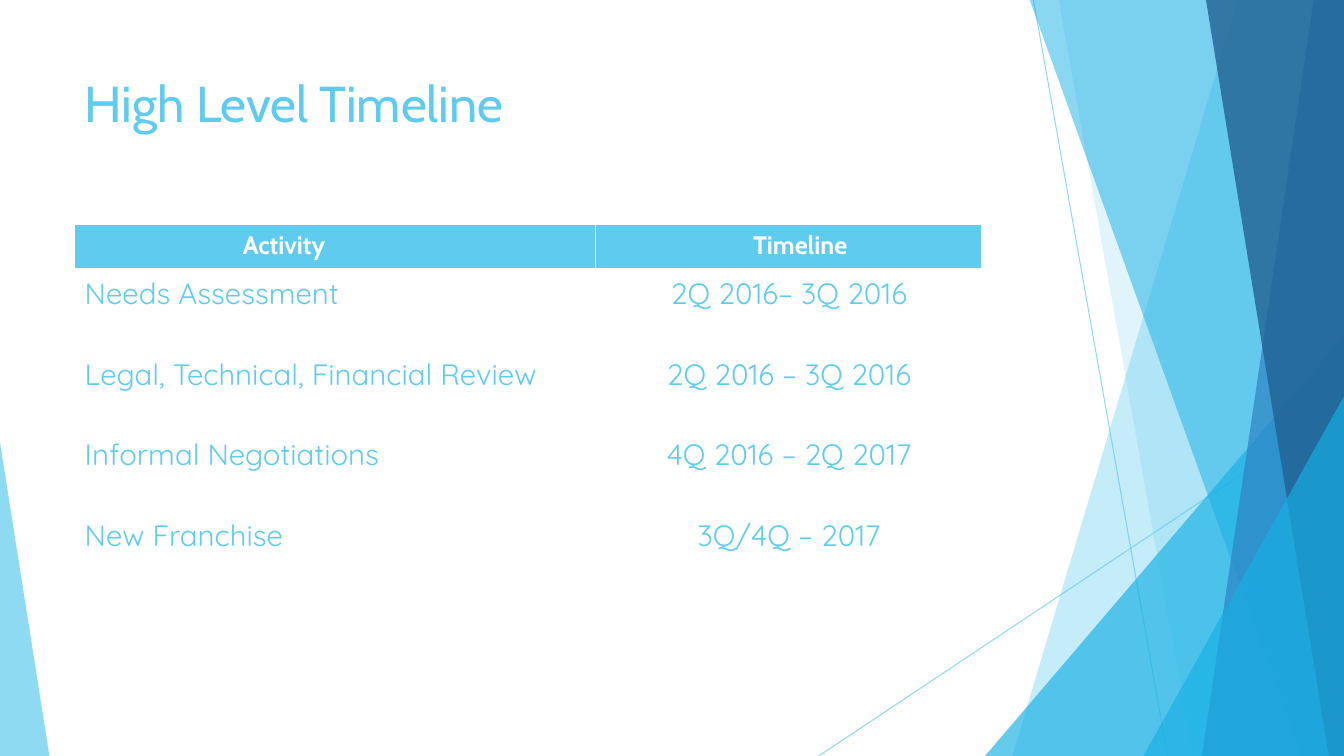
import pptx
import pptx.util
import pptx.dml.color
import pptx.enum.shapes
import pptx.enum.text
import pptx.oxml
import pptx.oxml.ns
import lxml.etree

COLORS = {"sky": "5FCBEF", "cyan": "17B0E4", "blue": "2E83C3",
          "navy": "226292", "white": "FFFFFF"}
HEADING_FONT, BODY_FONT = "Cabin", "Quicksand"
WIDTH, HEIGHT, BLEED_TOP = 13.33, 7.5, -0.01

TITLE = "High Level Timeline"
HEADERS = [("Activity", 1.67), ("Timeline", 1.56)]  # label, left indent
SCHEDULE = [
    ("Needs Assessment", "2Q 2016– 3Q 2016"),
    ("Legal, Technical, Financial Review", "2Q 2016 – 3Q 2016"),
    ("Informal Negotiations", "4Q 2016 – 2Q 2017"),
    ("New Franchise", "3Q/4Q – 2017"),
]
LEFT, TABLE_TOP = 0.74, 2.23
COLUMN_WIDTHS = [5.17, 3.83]
HEADER_HEIGHT, ROW_HEIGHT = 0.45, 0.8

# Hairlines: start, end
HAIRLINES = [((10.25, 0), (11.58, HEIGHT)), ((WIDTH, 4.03), (8.12, HEIGHT))]
# Bands reach the right edge: (top left x, bottom left x, colour, opacity %)
# Wedges stand on the bottom edge: (left, width, height, apex, colour, opacity %)
FACETS = [
    ("band", 12.28, 10.04, "sky", 36),
    ("band", 10.5, 11.83, "sky", 20),
    ("wedge", 9.77, 3.56, 4.17, 1, "cyan", 66),
    ("band", 10.21, 12.91, "cyan", 50),
    ("band", 13.03, 11.92, "blue", 70),
    ("band", 11.96, 13.18, "navy", 80),
    ("wedge", 11.34, 1.99, 3.57, 1, "cyan", 66),
    ("wedge", 0, 0.49, 3.11, 0, "sky", 70),
]

inches = pptx.util.Inches
qn = pptx.oxml.ns.qn


def rgb(name):
    return pptx.dml.color.RGBColor.from_string(COLORS[name])


def set_opacity(properties, percent):
    color = next(properties.iter(qn("a:srgbClr")))
    lxml.etree.SubElement(color, qn("a:alpha")).set("val", str(percent * 1000))


def add_hairline(slide, start, end):
    ends = [inches(value) for value in start + end]
    line = slide.shapes.add_connector(pptx.enum.shapes.MSO_CONNECTOR.STRAIGHT, *ends)
    line.line.color.rgb = rgb("sky")
    line.line.width = pptx.util.Pt(0.75)
    properties = line._element.spPr
    set_opacity(properties, 70)
    lxml.etree.SubElement(properties, qn("a:effectLst"))


def add_band(slide, top_x, bottom_x):
    corners = [(inches(x), inches(y)) for x, y in
               [(top_x, BLEED_TOP), (WIDTH, BLEED_TOP), (WIDTH, HEIGHT), (bottom_x, HEIGHT)]]
    outline = slide.shapes.build_freeform(*corners[0])
    outline.add_line_segments(corners[1:], close=True)
    return outline.convert_to_shape()


def add_wedge(slide, left, width, height, apex):
    wedge = slide.shapes.add_shape(
        pptx.enum.shapes.MSO_SHAPE.ISOSCELES_TRIANGLE,
        inches(left), inches(HEIGHT - height), inches(width), inches(height))
    wedge.adjustments[0] = apex
    return wedge


def add_facet(slide, kind, *details):
    *geometry, color, opacity = details
    facet = {"band": add_band, "wedge": add_wedge}[kind](slide, *geometry)
    facet.shadow.inherit = False
    facet.fill.solid()
    facet.fill.fore_color.rgb = rgb(color)
    facet.line.fill.background()
    set_opacity(facet._element.spPr, opacity)


def style_text(paragraph, font, size, color, bold=False):
    paragraph.font.name = font
    paragraph.font.size = pptx.util.Pt(size)
    paragraph.font.color.rgb = rgb(color)
    paragraph.font.bold = bold


def fill_cell(cell, text, fill, bottom_width):
    cell.text = text
    cell.fill.solid()
    cell.fill.fore_color.rgb = rgb(fill)
    properties = cell._tc.get_or_add_tcPr()
    for index, side in enumerate("LRTB"):
        width = bottom_width if side == "B" else 1
        border = lxml.etree.Element(qn("a:ln" + side), w=str(pptx.util.Pt(width)))
        paint = lxml.etree.SubElement(border, qn("a:solidFill"))
        lxml.etree.SubElement(paint, qn("a:srgbClr"), val=COLORS["white"])
        properties.insert(index, border)
    return cell.text_frame.paragraphs[0]


def add_title(slide):
    box = slide.shapes.add_textbox(inches(LEFT), inches(0.67), inches(9.4), inches(1.44))
    box.text_frame.word_wrap = True
    box.text_frame.text = TITLE
    style_text(box.text_frame.paragraphs[0], HEADING_FONT, 36, "sky")


def add_schedule(slide):
    heights = [HEADER_HEIGHT] + [ROW_HEIGHT] * len(SCHEDULE)
    table = slide.shapes.add_table(
        len(heights), len(COLUMN_WIDTHS), inches(LEFT), inches(TABLE_TOP),
        inches(sum(COLUMN_WIDTHS)), inches(sum(heights))).table
    table.first_row = table.horz_banding = False
    for column, width in zip(table.columns, COLUMN_WIDTHS):
        column.width = inches(width)
    for row, height in zip(table.rows, heights):
        row.height = inches(height)

    for column, (label, indent) in enumerate(HEADERS):
        cell = table.cell(0, column)
        style_text(fill_cell(cell, label, "sky", 3), HEADING_FONT, 18, "white", True)
        cell.margin_left = inches(indent)

    for row, entries in enumerate(SCHEDULE, start=1):
        for column, text in enumerate(entries):
            entry = fill_cell(table.cell(row, column), text, "white", 1)
            style_text(entry, BODY_FONT, 21, "sky")
            if column == 1:
                entry.alignment = pptx.enum.text.PP_ALIGN.CENTER


def main():
    deck = pptx.Presentation()
    deck.slide_width, deck.slide_height = inches(WIDTH), inches(HEIGHT)
    slide = deck.slides.add_slide(deck.slide_layouts[6])
    # Backdrop
    for start, end in HAIRLINES:
        add_hairline(slide, start, end)
    for facet in FACETS:
        add_facet(slide, *facet)
    # Content
    add_title(slide)
    add_schedule(slide)
    deck.save("out.pptx")


if __name__ == "__main__":
    main()
